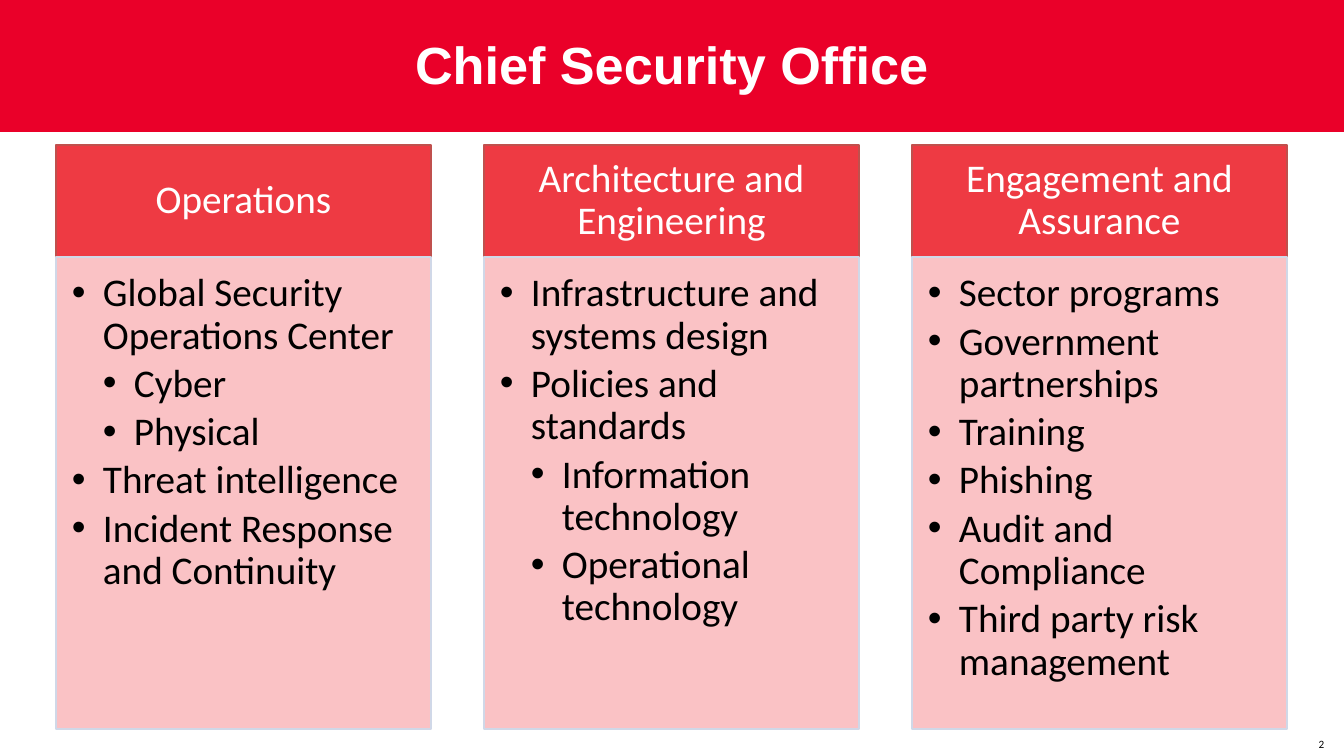
from lxml import etree
from pptx import Presentation
from pptx.dml.color import RGBColor
from pptx.enum.shapes import MSO_SHAPE
from pptx.enum.text import MSO_ANCHOR, MSO_AUTO_SIZE, PP_ALIGN
from pptx.oxml.ns import qn
from pptx.util import Pt

RECTANGLE = MSO_SHAPE.RECTANGLE
TOP, MIDDLE = MSO_ANCHOR.TOP, MSO_ANCHOR.MIDDLE
LEFT, CENTER = PP_ALIGN.LEFT, PP_ALIGN.CENTER
NO_FIT = MSO_AUTO_SIZE.NONE

EMU_PER_PX = 914400 / 100.8
SLIDE_WIDTH, SLIDE_HEIGHT = 1344, 756
COMPARISON_LAYOUT = 4
COLUMN_LEFT, COLUMN_TOP, COLUMN_PITCH = 56, 145, 428
COLUMN_WIDTH, COLUMN_HEIGHT, HEADER_HEIGHT = 375, 584, 112
BULLET_INDENT = 31

COLORS = {
    "title_band": "EA0029",
    "header": "EE3A43",
    "header_line": "C0504D",
    "list": "FAC2C5",
    "list_line": "D0D8E8",
    "white": "FFFFFF",
    "black": "000000",
}

# Each column: heading, then (level, text) items
COLUMNS = [
    ("Operations", [
        (0, "Global Security Operations Center"),
        (1, "Cyber"),
        (1, "Physical"),
        (0, "Threat intelligence"),
        (0, "Incident Response and Continuity"),
    ]),
    ("Architecture and Engineering", [
        (0, "Infrastructure and systems design"),
        (0, "Policies and standards"),
        (1, "Information technology"),
        (1, "Operational technology"),
    ]),
    ("Engagement and Assurance", [
        (0, "Sector programs"),
        (0, "Government partnerships"),
        (0, "Training"),
        (0, "Phishing"),
        (0, "Audit and Compliance"),
        (0, "Third party risk management"),
    ]),
]


def px(length):
    return round(length * EMU_PER_PX)


def color(name):
    return RGBColor.from_string(COLORS[name])


def place(shape, box):
    shape.left, shape.top, shape.width, shape.height = map(px, box)


def paint(shape, fill, line=None):
    shape.fill.solid()
    shape.fill.fore_color.rgb = color(fill)
    if line:
        shape.line.color.rgb = color(line)
        shape.line.width = Pt(2)


def set_frame(shape, anchor, insets):
    frame = shape.text_frame
    frame.word_wrap = True
    frame.auto_size = NO_FIT
    frame.vertical_anchor = anchor
    (frame.margin_left, frame.margin_top,
     frame.margin_right, frame.margin_bottom) = map(px, insets)
    return frame


def write(paragraph, text, size, font_color, font="Calibri", bold=False,
          align=CENTER, line_spacing=0.9, space_after=0):
    paragraph.alignment = align
    paragraph.line_spacing = line_spacing
    paragraph.space_before = Pt(0)
    paragraph.space_after = Pt(space_after)
    run = paragraph.add_run()
    run.text = text
    run.font.name = font
    run.font.size = Pt(size)
    run.font.bold = bold
    run.font.color.rgb = color(font_color)


def add_bullet(paragraph, level):
    paragraph.level = level
    properties = paragraph._p.get_or_add_pPr()
    properties.set("marL", str(px(BULLET_INDENT * (level + 1))))
    properties.set("indent", str(-px(BULLET_INDENT)))
    etree.SubElement(properties, qn("a:buFont"), typeface="Arial")
    etree.SubElement(properties, qn("a:buChar"), char="•")


def build_title(title, box):
    place(title, box)
    paint(title, "title_band")
    frame = set_frame(title, MIDDLE, (10, 5, 10, 5))
    write(frame.paragraphs[0], "Chief Security Office", 37.3, "white",
          font="Arial", bold=True, line_spacing=Pt(41.3))


def build_column(slide, list_placeholder, box, heading, items):
    left, top, width, height = box

    # Heading, stacked beneath the list so the list border stays on top
    header = slide.shapes.add_shape(RECTANGLE, 0, 0, 0, 0)
    place(header, (left, top, width, HEADER_HEIGHT))
    header.shadow.inherit = False
    paint(header, "header", "header_line")
    frame = set_frame(header, MIDDLE, (22, 12, 22, 12))
    write(frame.paragraphs[0], heading, 28, "white")
    list_placeholder._element.addprevious(header._element)

    # Bulleted list
    place(list_placeholder,
          (left, top + HEADER_HEIGHT, width, height - HEADER_HEIGHT))
    paint(list_placeholder, "list", "list_line")
    frame = set_frame(list_placeholder, TOP, (16, 16, 22, 24))
    for index, (level, text) in enumerate(items):
        paragraph = frame.add_paragraph() if index else frame.paragraphs[0]
        add_bullet(paragraph, level)
        write(paragraph, text, 28, "black", align=LEFT, space_after=4.2)


def build_page_number(slide, box):
    number = slide.shapes.add_textbox(0, 0, 0, 0)
    place(number, box)
    frame = set_frame(number, MIDDLE, (0, 0, 0, 0))
    write(frame.paragraphs[0], "2", 8, "black", line_spacing=1.0)


def main():
    presentation = Presentation()
    presentation.slide_width = px(SLIDE_WIDTH)
    presentation.slide_height = px(SLIDE_HEIGHT)
    layout = presentation.slide_layouts[COMPARISON_LAYOUT]
    slide = presentation.slides.add_slide(layout)
    title, *lists = slide.placeholders

    build_title(title, (0, 0, SLIDE_WIDTH, 132))
    for index, (heading, items) in enumerate(COLUMNS):
        box = (COLUMN_LEFT + index * COLUMN_PITCH, COLUMN_TOP,
               COLUMN_WIDTH, COLUMN_HEIGHT)
        build_column(slide, lists[index], box, heading, items)
    build_page_number(slide, (1299, 732, 45, 24))

    # The layout offers more list placeholders than there are columns
    for unused in lists[len(COLUMNS):]:
        unused._element.getparent().remove(unused._element)

    presentation.save("out.pptx")


if __name__ == "__main__":
    main()
